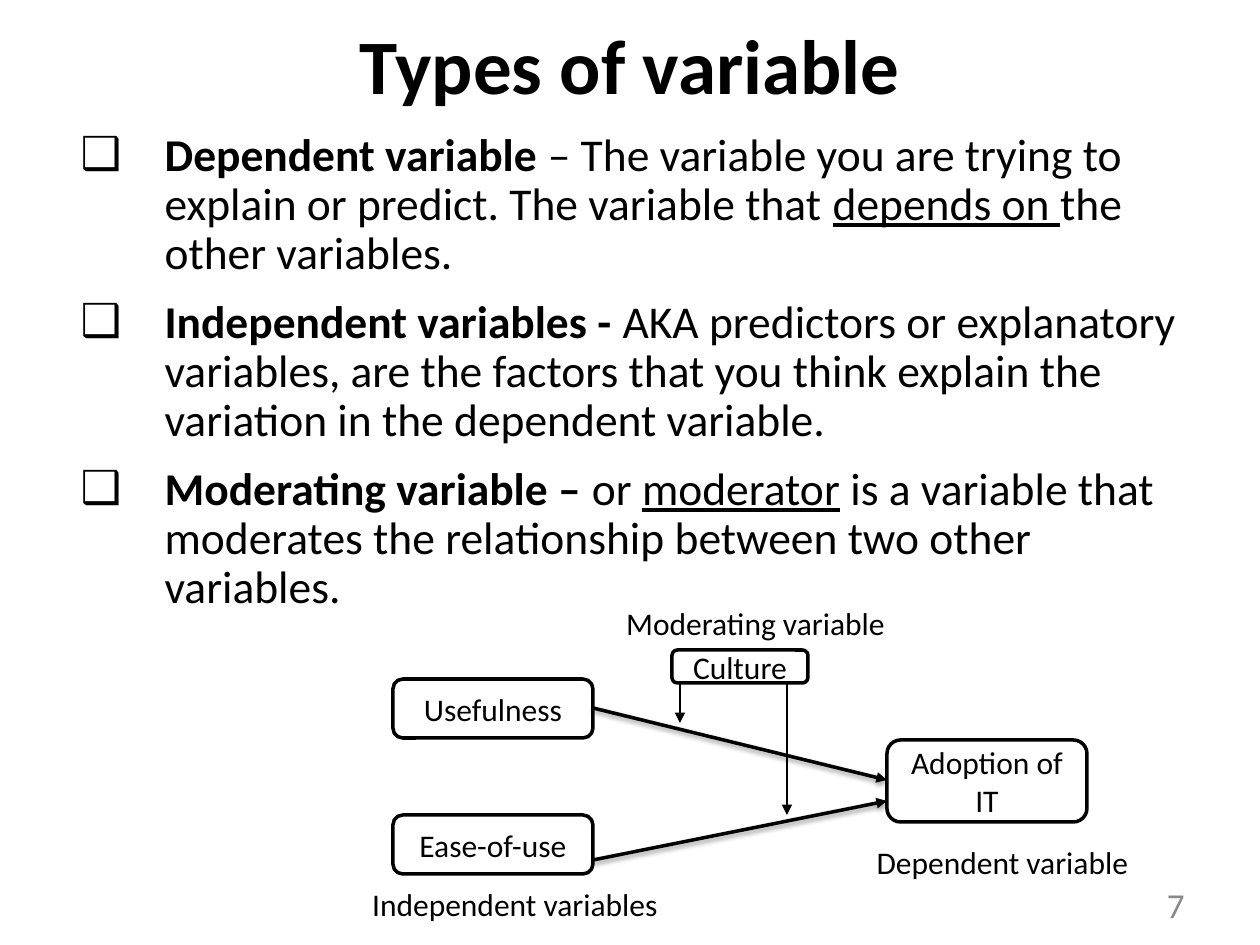
from lxml import etree
from pptx import Presentation
from pptx.dml.color import RGBColor
from pptx.enum.shapes import MSO_CONNECTOR, MSO_SHAPE
from pptx.enum.text import MSO_ANCHOR, MSO_AUTO_SIZE, PP_ALIGN
from pptx.oxml.ns import qn
from pptx.util import Emu, Pt

RECT, ROUND = MSO_SHAPE.RECTANGLE, MSO_SHAPE.ROUNDED_RECTANGLE
STRAIGHT = MSO_CONNECTOR.STRAIGHT
TOP, MIDDLE = MSO_ANCHOR.TOP, MSO_ANCHOR.MIDDLE
LEFT, CENTER, RIGHT = PP_ALIGN.LEFT, PP_ALIGN.CENTER, PP_ALIGN.RIGHT
NO_FIT = MSO_AUTO_SIZE.NONE

BLACK = RGBColor(0, 0, 0)
WHITE = RGBColor(255, 255, 255)
GRAY = RGBColor(0x89, 0x89, 0x89)
FONT = "Calibri"
INDENT = 84

POINTS = [
    [("Dependent variable", "b"),
     (" – The variable you are trying to explain or predict. The variable that ", ""),
     ("depends on ", "u"), ("the other variables.", "")],
    [("Independent variables - ", "b"),
     ("AKA predictors or explanatory variables, are the factors that you think "
      "explain the variation in the dependent variable.", "")],
    [("Moderating variable – ", "b"), ("or ", ""), ("moderator", "u"),
     (" is a variable that moderates the relationship between two other variables.", "")],
]


def px(n):
    return Emu(round(n * 914400 / 126))


def place(shape, left, top, width, height):
    shape.left, shape.top = px(left), px(top)
    shape.width, shape.height = px(width), px(height)


def write(para, text, size=18, color=BLACK, bold=False, under=False, align=CENTER):
    para.alignment = align
    run = para.add_run()
    run.text = text
    font = run.font
    font.name, font.size, font.bold, font.underline = FONT, Pt(size), bold, under
    font.color.rgb = color


def frame(shape, anchor=MIDDLE):
    text = shape.text_frame
    text.word_wrap = True
    text.auto_size = NO_FIT
    text.vertical_anchor = anchor
    return text


def bullet(para):
    para.line_spacing = 0.9
    para.space_before, para.space_after = Pt(5.2), Pt(6)
    props = para._p.get_or_add_pPr()
    props.set("marL", str(px(INDENT)))
    props.set("indent", str(-px(INDENT)))
    etree.SubElement(props, qn("a:buChar"), char="❑")


def add_list(body):
    text = frame(body, TOP)
    for i, parts in enumerate(POINTS):
        para = text.add_paragraph() if i else text.paragraphs[0]
        for words, style in parts:
            write(para, words, size=26, bold=style == "b", under=style == "u", align=LEFT)
        bullet(para)


def add_box(group, text, left, top, width, height, kind=ROUND):
    box = group.add_shape(kind, px(left), px(top), px(width), px(height))
    box.shadow.inherit = False
    box.fill.solid()
    box.fill.fore_color.rgb = WHITE
    if kind == ROUND:
        box.line.color.rgb = BLACK
        box.line.width = Pt(2)
    else:
        box.line.fill.background()
    write(frame(box).paragraphs[0], text)


def add_label(group, text, left, top, width):
    add_box(group, text, left, top, width, 28, RECT)


def add_arrow(group, x1, y1, x2, y2, width=0.75, shade=False):
    arrow = group.add_connector(STRAIGHT, px(x1), px(y1), px(x2), px(y2))
    arrow.line.color.rgb = BLACK
    arrow.line.width = Pt(width)
    props = arrow._element.spPr
    etree.SubElement(props.find(qn("a:ln")), qn("a:tailEnd"), type="triangle")
    effects = etree.SubElement(props, qn("a:effectLst"))
    if shade:
        shadow = etree.SubElement(effects, qn("a:outerShdw"), blurRad=str(Pt(3.1)),
                                  dist=str(Pt(1.6)), dir="5400000", rotWithShape="0")
        tone = etree.SubElement(shadow, qn("a:srgbClr"), val=str(BLACK))
        etree.SubElement(tone, qn("a:alpha"), val="38000")


def add_model(slide):
    group = slide.shapes.add_group_shape().shapes
    add_label(group, "Dependent variable", 850, 848, 305)
    add_label(group, "Independent variables", 350, 890, 330)
    add_box(group, "Usefulness", 393, 679, 200, 59)
    add_box(group, "Ease-of-use", 393, 815, 200, 59)
    add_box(group, "Adoption of IT", 887, 740, 200, 82)
    add_arrow(group, 593, 708, 887, 780, width=2, shade=True)
    add_arrow(group, 593, 860, 887, 801, width=2, shade=True)
    add_box(group, "Culture", 672, 650, 136, 33)
    add_arrow(group, 680, 683, 680, 723)
    add_arrow(group, 787, 683, 787, 815)
    add_label(group, "Moderating variable", 603, 609, 305)


def main():
    deck = Presentation()
    deck.slide_width, deck.slide_height = px(1260), px(945)
    slide = deck.slides.add_slide(deck.slide_layouts[1])
    title, body = slide.placeholders
    place(title, 63, 21, 1134, 86)
    write(frame(title).paragraphs[0], "Types of variable", size=44, bold=True)
    place(body, 68, 126, 1134, 539)
    add_list(body)
    page = slide.shapes.add_textbox(px(1040), px(882), px(157), px(44))
    write(frame(page).paragraphs[0], "7", size=20, color=GRAY, align=RIGHT)
    add_model(slide)
    deck.save("out.pptx")


if __name__ == "__main__":
    main()
